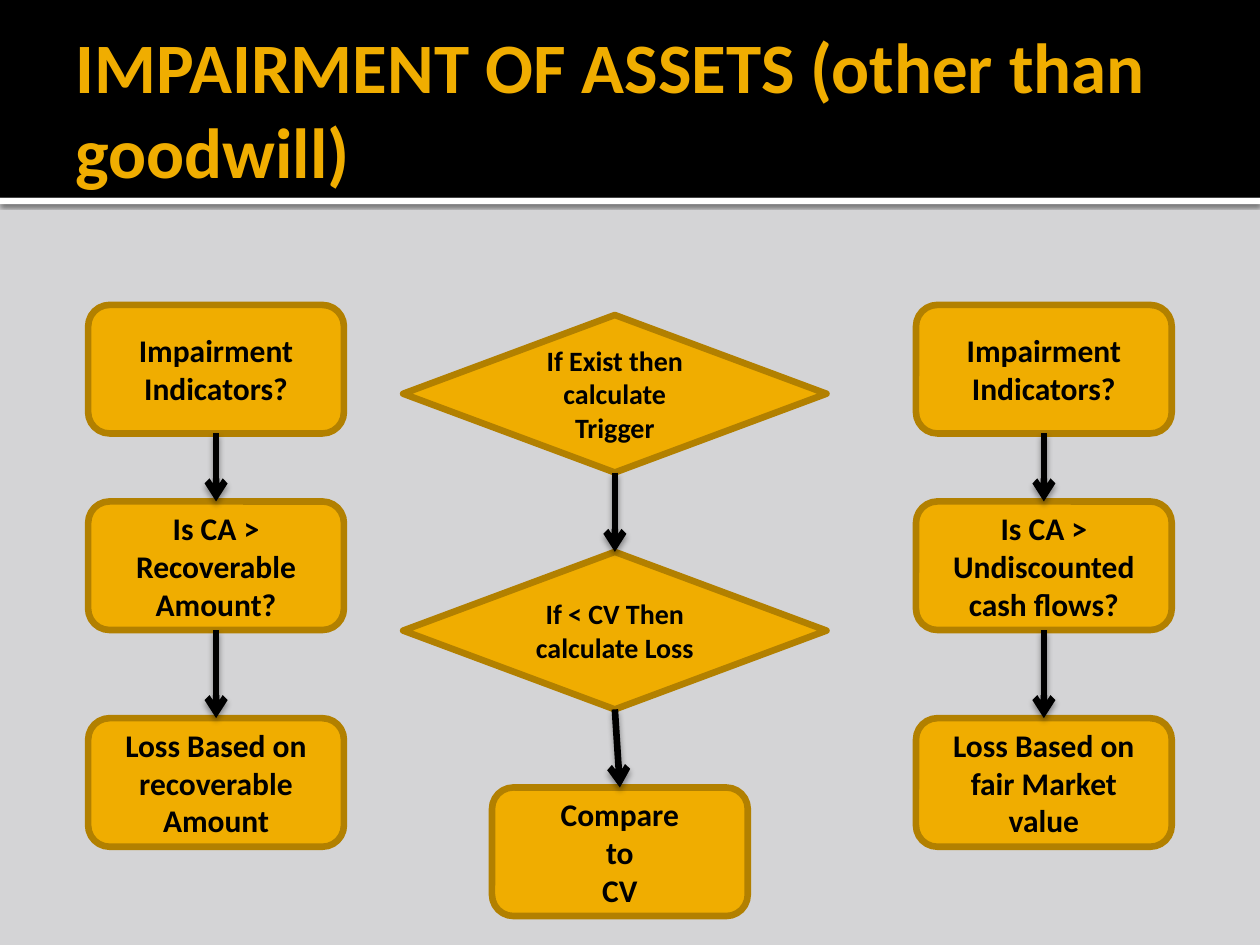
from itertools import pairwise
from lxml.etree import SubElement
from pptx import Presentation
from pptx.dml.color import RGBColor
from pptx.enum.shapes import MSO_CONNECTOR as Link, MSO_SHAPE as Shape
from pptx.enum.text import MSO_ANCHOR as Anchor, PP_ALIGN as Align
from pptx.oxml.ns import qn
from pptx.util import Inches, Pt

GOLD = RGBColor(0xF0, 0xAD, 0x00)
BROWN = RGBColor(0xB2, 0x80, 0x00)
BLACK = RGBColor(0, 0, 0)
WHITE = RGBColor(0xFF, 0xFF, 0xFF)
GREY = RGBColor(0xD4, 0xD4, 0xD6)
FONT = "Calibri"
EDGE = Pt(3.78)

STEP = (Shape.FLOWCHART_ALTERNATE_PROCESS, 2.03, 1.02, 18)
TEST = (Shape.FLOWCHART_DECISION, 3.36, 1.25, 16)

FLOWS = [
    (0.7, 2.42, 2.03, [
        (STEP, 0, "Impairment Indicators?"),
        (STEP, 1.56, "Is CA >\nRecoverable Amount?"),
        (STEP, 3.28, "Loss Based on recoverable Amount"),
    ]),
    (3.2, 2.5, 3.36, [
        (TEST, 0, "If Exist then calculate Trigger"),
        (TEST, 1.88, "If < CV Then calculate Loss"),
        (STEP, 3.75, "Compare\nto\nCV"),
    ]),
    (7.27, 2.42, 2.03, [
        (STEP, 0, "Impairment Indicators?"),
        (STEP, 1.56, "Is CA > Undiscounted cash flows?"),
        (STEP, 3.28, "Loss Based on fair Market value"),
    ]),
]


def style(frame, size, color, align):
    """Format all text of a frame in bold."""
    frame.word_wrap = True
    frame.vertical_anchor = Anchor.MIDDLE
    for para in frame.paragraphs:
        para.alignment = align
        for run in para.runs:
            font = run.font
            font.name, font.size, font.bold = FONT, Pt(size), True
            font.color.rgb = color


def shade(shape, alpha, blur, dist):
    """Cast a black shadow straight down."""
    props = shape._element.spPr
    for old in props.findall(qn("a:effectLst")):
        props.remove(old)
    effect = SubElement(props, qn("a:effectLst"))
    outer = SubElement(effect, qn("a:outerShdw"), blurRad=str(Pt(blur)),
                       dist=str(Pt(dist)), dir="5400000", rotWithShape="0")
    tint = SubElement(outer, qn("a:srgbClr"), val=str(BLACK))
    SubElement(tint, qn("a:alpha"), val=str(alpha * 1000))


def add_bar(slide, left, top, width, height, color):
    """Add a plain filled band."""
    bar = slide.shapes.add_shape(Shape.RECTANGLE, Inches(left), Inches(top),
                                 Inches(width), Inches(height))
    bar.shadow.inherit = False
    bar.fill.solid()
    bar.fill.fore_color.rgb = color
    bar.line.fill.background()
    return bar


def add_header(slide, left, top, width, height):
    """Add the title on its band with a white rule below."""
    rule = add_bar(slide, left, top + height, width, 0.05, WHITE)
    shade(rule, 60, 2.5, 0.8)
    add_bar(slide, left, top, width, height, BLACK)
    title = slide.shapes.add_textbox(Inches(left + 0.5), Inches(top + 0.17),
                                     Inches(width - 1), Inches(height - 0.2))
    frame = title.text_frame
    frame.margin_right = Inches(0.05)
    frame.text = "IMPAIRMENT OF ASSETS (other than goodwill)"
    style(frame, 40.5, GOLD, Align.LEFT)


def add_node(slide, kind, left, top, width, height, size, text):
    """Add one gold flowchart node."""
    node = slide.shapes.add_shape(kind, Inches(left), Inches(top),
                                  Inches(width), Inches(height))
    node.shadow.inherit = False
    node.fill.solid()
    node.fill.fore_color.rgb = GOLD
    node.line.color.rgb = BROWN
    node.line.width = EDGE
    node.text_frame.text = text
    style(node.text_frame, size, BLACK, Align.CENTER)
    return node


def add_arrow(slide, upper, lower):
    """Join two nodes from bottom to top."""
    arrow = slide.shapes.add_connector(Link.STRAIGHT, 0, 0, 0, 0)
    arrow.begin_connect(upper, 2)
    arrow.end_connect(lower, 0)
    arrow.line.color.rgb = BLACK
    arrow.line.width = EDGE
    SubElement(arrow.line._get_or_add_ln(), qn("a:tailEnd"), type="arrow")
    shade(arrow, 38, 3.5, 2)


def add_flow(slide, left, top, width, steps):
    """Add a column of centred nodes linked downwards."""
    nodes = []
    for (kind, wide, high, size), drop, text in steps:
        shift = (width - wide) / 2 + (0.04 if wide < width else 0)
        nodes.append(add_node(slide, kind, left + shift, top + drop,
                              wide, high, size, text))
    for upper, lower in pairwise(nodes):
        add_arrow(slide, upper, lower)


def main():
    """Build and save the slide."""
    deck = Presentation()
    deck.slide_width, deck.slide_height = Inches(10), Inches(7.5)
    slide = deck.slides.add_slide(deck.slide_layouts[6])
    back = slide.background.fill
    back.solid()
    back.fore_color.rgb = GREY
    add_header(slide, 0, 0, 10, 1.57)
    for flow in FLOWS:
        add_flow(slide, *flow)
    deck.save("out.pptx")


if __name__ == "__main__":
    main()
